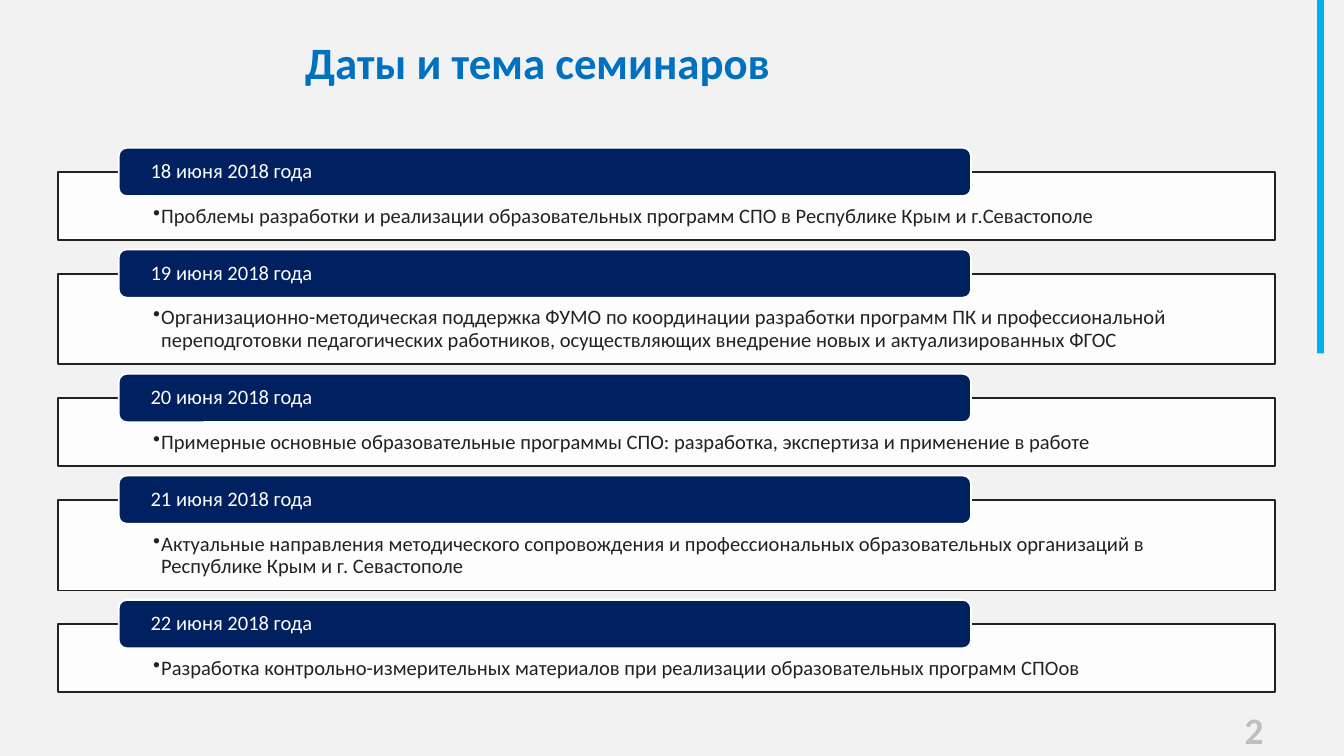
from lxml.etree import SubElement
from pptx import Presentation
from pptx.dml.color import RGBColor
from pptx.enum.shapes import MSO_SHAPE as Shape
from pptx.enum.text import MSO_ANCHOR as Anchor, PP_ALIGN as Align
from pptx.oxml.ns import qn
from pptx.util import Inches, Pt

WIDTH = 10
HEIGHT = WIDTH * 9 / 16
PAPER = RGBColor(0xF2, 0xF2, 0xF2)
WHITE = RGBColor(0xFF, 0xFF, 0xFF)
INK = RGBColor(0x22, 0x22, 0x22)
NAVY = RGBColor(0x00, 0x20, 0x60)
BLUE = RGBColor(0x00, 0x70, 0xC0)
SKY = RGBColor(0x00, 0xB0, 0xF0)
GREY = RGBColor(0xBF, 0xBF, 0xBF)

TITLE = "Даты и тема семинаров"
SEMINARS = [
    ("18 июня 2018 года", 1,
     "Проблемы разработки и реализации образовательных программ СПО в Республике Крым и г.Севастополе"),
    ("19 июня 2018 года", 2,
     "Организационно-методическая поддержка ФУМО по координации разработки программ ПК и профессиональной "
     "переподготовки педагогических работников, осуществляющих внедрение новых и актуализированных ФГОС"),
    ("20 июня 2018 года", 1,
     "Примерные основные образовательные программы СПО: разработка, экспертиза и применение в работе"),
    ("21 июня 2018 года", 2,
     "Актуальные направления методического сопровождения и профессиональных образовательных организаций "
     "в Республике Крым и г. Севастополе"),
    ("22 июня 2018 года", 1,
     "Разработка контрольно-измерительных материалов при реализации образовательных программ СПОов"),
]


def inches(box):
    return [Inches(length) for length in box]


def write(frame, text, size, color, margins, bold=False, anchor=Anchor.TOP, align=Align.LEFT):
    left, top, right, bottom = inches(margins)
    settings = {"word_wrap": True, "vertical_anchor": anchor, "margin_left": left,
                "margin_top": top, "margin_right": right, "margin_bottom": bottom}
    for name, value in settings.items():
        setattr(frame, name, value)
    paragraph = frame.paragraphs[0]
    paragraph.alignment = align
    run = paragraph.add_run()
    run.text = text
    for name, value in {"name": "Calibri", "size": Pt(size), "bold": bold}.items():
        setattr(run.font, name, value)
    run.font.color.rgb = color
    return paragraph


def add_block(slide, kind, box, fill, line=None):
    block = slide.shapes.add_shape(kind, *inches(box))
    block.shadow.inherit = False
    block.fill.solid()
    block.fill.fore_color.rgb = fill
    if line is None:
        block.line.fill.background()
    else:
        block.line.color.rgb = line
        block.line.width = Pt(1)
    return block


def add_bullet(paragraph):
    properties = paragraph._p.get_or_add_pPr()
    properties.set("marL", str(Inches(0.06)))
    properties.set("indent", str(Inches(-0.06)))
    SubElement(properties, qn("a:buChar")).set("char", "•")


def add_title(slide, box):
    title = slide.shapes.title
    title.left, title.top, title.width, title.height = inches(box)
    write(title.text_frame, TITLE, 24, BLUE, (0.1, 0.05, 0.1, 0.05), bold=True, anchor=Anchor.MIDDLE)


def add_page_number(slide, box):
    number = slide.shapes.add_textbox(*inches(box))
    write(number.text_frame, "2", 20, GREY, (0.1, 0.05, 0.1, 0.05), bold=True, align=Align.RIGHT)


def add_seminar(slide, box, date, topic):
    left, top, width, height = box
    card = add_block(slide, Shape.RECTANGLE, box, WHITE, INK)
    color = card.fill._xPr.find(qn("a:solidFill"))[0]
    SubElement(color, qn("a:alpha")).set("val", "90000")
    paragraph = write(card.text_frame, topic, 11, INK, (0.71, 0.25, 0.7, 0.09))
    paragraph.line_spacing = 0.9
    add_bullet(paragraph)

    tab_box = (left + 0.05 * width, top - 0.18, 0.7 * width, 0.36)
    tab = add_block(slide, Shape.ROUNDED_RECTANGLE, tab_box, NAVY, WHITE)
    heading = write(tab.text_frame, date, 11, WHITE, (0.22, 0, 0.22, 0), anchor=Anchor.MIDDLE)
    heading.line_spacing = 0.9


def add_schedule(slide, box):
    left, top, width, height = box
    line_height, gap = 0.17, 0.25
    lines = sum(count for _, count, _ in SEMINARS)
    padding = (height - lines * line_height - (len(SEMINARS) - 1) * gap) / len(SEMINARS)
    for date, count, topic in SEMINARS:
        card_height = padding + count * line_height
        add_seminar(slide, (left, top, width, card_height), date, topic)
        top += card_height + gap


def main():
    deck = Presentation()
    deck.slide_width, deck.slide_height = inches((WIDTH, HEIGHT))
    slide = deck.slides.add_slide(deck.slide_layouts[5])
    slide.background.fill.solid()
    slide.background.fill.fore_color.rgb = PAPER
    add_block(slide, Shape.RECTANGLE, (0.98 * WIDTH, 0, 0.05, 2.63), SKY)
    add_page_number(slide, (7.17, 5.21, 2.33, 0.3))
    add_title(slide, (2.17, 0.21, 7.64, 0.5))
    add_schedule(slide, (0.43, 1.28, 9.06, 3.87))
    deck.save("out.pptx")


if __name__ == "__main__":
    main()
